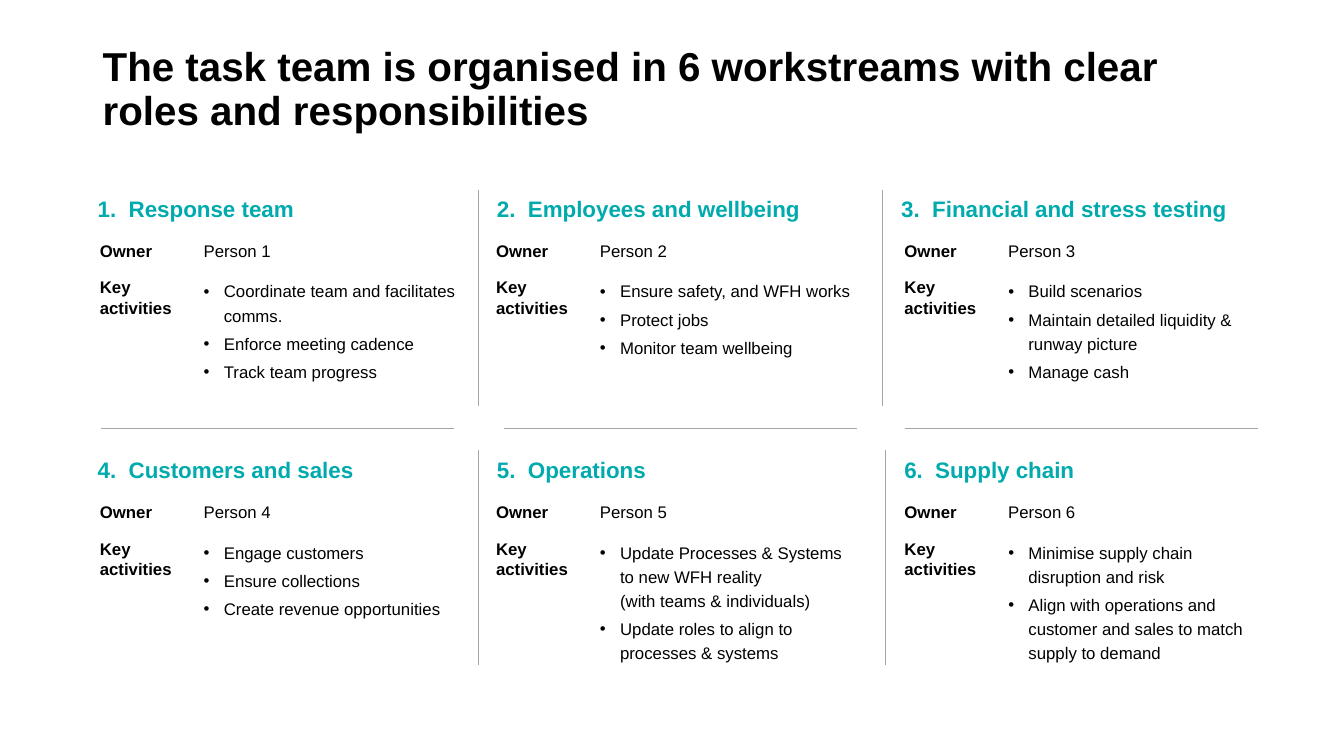
"""Build a slide showing six workstreams with their owners and key activities."""
from lxml.etree import SubElement
from pptx import Presentation
from pptx.dml.color import RGBColor
from pptx.enum.shapes import MSO_CONNECTOR
from pptx.enum.text import MSO_ANCHOR
from pptx.oxml.ns import qn
from pptx.util import Inches, Pt

COLORS = {"text": "000000", "head": "01AAAD", "rule": "A5A5A5"}
STREAMS = [
    ("Response team", ["Coordinate team and facilitates comms.",
                       "Enforce meeting cadence", "Track team progress"]),
    ("Employees and wellbeing", ["Ensure safety, and WFH works", "Protect jobs",
                                 "Monitor team wellbeing"]),
    ("Financial and stress testing", ["Build scenarios",
                                      "Maintain detailed liquidity & runway picture",
                                      "Manage cash"]),
    ("Customers and sales", ["Engage customers", "Ensure collections",
                             "Create revenue opportunities"]),
    ("Operations", ["Update Processes & Systems to new WFH reality\n(with teams & individuals)",
                    "Update roles to align to processes & systems"]),
    ("Supply chain", ["Minimise supply chain disruption and risk",
                      "Align with operations and customer and sales to match supply to demand"]),
]
LEFTS = [0.99, 4.92, 8.97]
HEADS = [[0.87, 4.83, 8.84], [0.87, 4.83, 8.87]]

deck = Presentation()
deck.slide_width, deck.slide_height = Inches(13.33), Inches(7.5)
slide = deck.slides.add_slide(deck.slide_layouts[6])


def add_text(lines, left, top, width, height, size=12, bold=False, color="text", inset=0):
    box = slide.shapes.add_textbox(Inches(left), Inches(top), Inches(width), Inches(height))
    frame = box.text_frame
    frame.word_wrap = True
    frame.margin_left = frame.margin_right = Inches(inset)
    frame.margin_top = frame.margin_bottom = Inches(inset / 2)
    for i, line in enumerate(lines):
        para = frame.paragraphs[0] if i == 0 else frame.add_paragraph()
        para.text = line
        para.font.name, para.font.size, para.font.bold = "Arial", Pt(size), bold
        para.font.color.rgb = RGBColor.from_string(COLORS[color])
    return frame


def add_rule(x1, y1, x2, y2):
    rule = slide.shapes.add_connector(
        MSO_CONNECTOR.STRAIGHT, Inches(x1), Inches(y1), Inches(x2), Inches(y2))
    rule.line.color.rgb = RGBColor.from_string(COLORS["rule"])
    rule.line.width = Pt(0.5)
    SubElement(rule._element.spPr, qn("a:effectLst"))


title = add_text(["The task team is organised in 6 workstreams with clear roles and responsibilities"],
                 0.92, 0.4, 11.5, 0.99, size=28.8, bold=True, inset=0.1)
title.vertical_anchor = MSO_ANCHOR.MIDDLE
title.paragraphs[0].line_spacing = 0.9

for i, (name, tasks) in enumerate(STREAMS):
    row, col = divmod(i, 3)
    left, top = LEFTS[col], 1.89 + 2.59 * row
    add_text([f"{i + 1}.  {name}"], HEADS[row][col], top, 3.71, 0.37,
             size=16, bold=True, color="head", inset=0.1)
    add_text(["Owner"], left, top + 0.5, 0.85, 0.2, bold=True)
    add_text([f"Person {i + 1}"], left + 1.03, top + 0.5, 2.64, 0.3)
    add_text(["Key activities"], left, top + 0.86, 1.02, 0.4, bold=True)
    body = add_text(tasks, left + 1.03, top + 0.86, 2.55, 1.13)
    for para in body.paragraphs:
        para.line_spacing, para.space_after = 1.2, Pt(3)
        props = para._p.get_or_add_pPr()
        props.set("marL", str(Inches(0.2)))
        props.set("indent", str(Inches(-0.2)))
        SubElement(props, qn("a:buFont"), typeface="Arial")
        SubElement(props, qn("a:buChar"), char="•")
        props.append(props.find(qn("a:defRPr")))

for x, y in [(4.74, 1.89), (8.75, 1.89), (4.74, 4.46), (8.78, 4.46)]:
    add_rule(x, y, x, y + 2.14)
for x in [1, 5, 8.98]:
    add_rule(x, 4.25, x + 3.5, 4.25)

deck.save("out.pptx")
